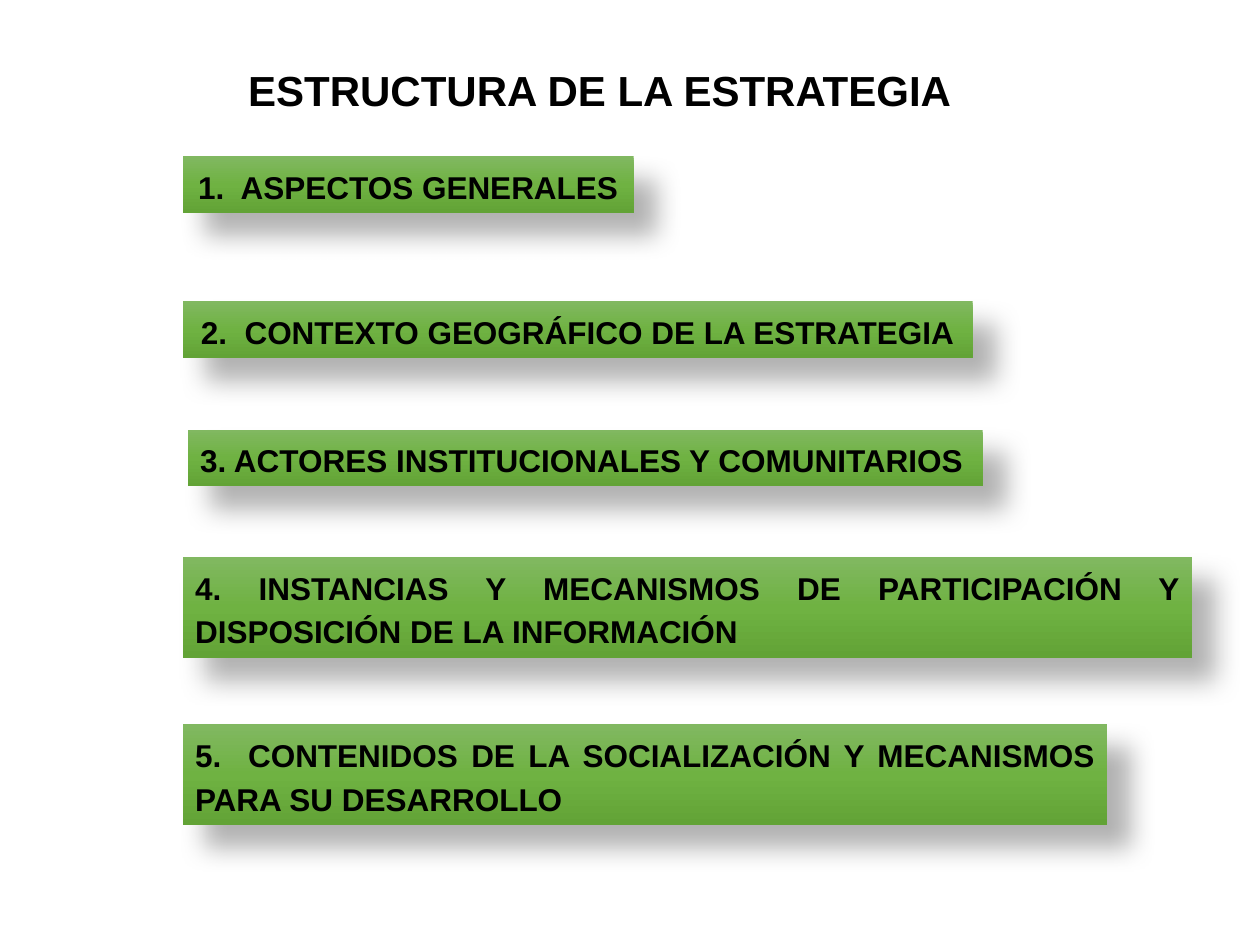
from pptx import Presentation
from pptx.dml.color import RGBColor
from pptx.enum.shapes import MSO_SHAPE
from pptx.enum.text import MSO_ANCHOR, MSO_AUTO_SIZE, PP_ALIGN
from pptx.oxml import parse_xml
from pptx.oxml.ns import nsdecls, qn
from pptx.util import Inches, Pt

RECTANGLE = MSO_SHAPE.RECTANGLE
TOP = MSO_ANCHOR.TOP
GROW = MSO_AUTO_SIZE.SHAPE_TO_FIT_TEXT
CENTER, JUSTIFY = PP_ALIGN.CENTER, PP_ALIGN.JUSTIFY

COLORS = {
    "light": "81B861",
    "middle": "6FB242",
    "dark": "62A336",
    "ink": "000000",
    "shadow": "000000",
}
GRADIENT = {0: "light", 50: "middle", 100: "dark"}
COLUMNS, ROWS = 100, 75
CELL = Inches(0.1)
BAR_LEFT = 14.5
ONE_LINE, TWO_LINES = 4.5, 8

SECTIONS = [
    ("1.  ASPECTOS GENERALES",
     (BAR_LEFT, 12.4, 35.8, ONE_LINE), CENTER, False),
    ("2.  CONTEXTO GEOGRÁFICO DE LA ESTRATEGIA",
     (BAR_LEFT, 23.9, 62.7, ONE_LINE), CENTER, False),
    ("3. ACTORES INSTITUCIONALES Y COMUNITARIOS",
     (14.9, 34.1, 63.1, ONE_LINE), JUSTIFY, True),
    ("4. INSTANCIAS Y MECANISMOS DE PARTICIPACIÓN Y DISPOSICIÓN DE LA INFORMACIÓN",
     (BAR_LEFT, 44.2, 80.1, TWO_LINES), JUSTIFY, True),
    ("5.  CONTENIDOS DE LA SOCIALIZACIÓN Y MECANISMOS PARA SU DESARROLLO",
     (BAR_LEFT, 57.5, 73.4, TWO_LINES), JUSTIFY, True),
]


def grid(area):
    """Turn columns and rows into slide lengths."""
    return [int(CELL * units) for units in area]


def set_values(target, values):
    """Set each named attribute of the target."""
    for name, value in values.items():
        setattr(target, name, value)


def write_text(box, text, size, align, wrap):
    """Write one bold paragraph into a box that fits its text."""
    frame = box.text_frame
    set_values(frame, {"word_wrap": wrap, "auto_size": GROW, "vertical_anchor": TOP})
    para = frame.paragraphs[0]
    set_values(para, {"alignment": align, "line_spacing": 1.15, "space_before": Pt(0)})
    span = para.add_run()
    span.text = text
    set_values(span.font, {"name": "Arial", "size": Pt(size), "bold": True})
    span.font.color.rgb = RGBColor.from_string(COLORS["ink"])


def fill_gradient(box):
    """Fill a box with the green gradient from top to bottom."""
    box.fill.gradient()
    box.fill.gradient_angle = 270
    stops = box.element.spPr.find(".//" + qn("a:gsLst"))
    for stop in list(stops):
        stops.remove(stop)
    for share, name in GRADIENT.items():
        stops.append(parse_xml(
            f'<a:gs {nsdecls("a")} pos="{share * 1000}">'
            f'<a:srgbClr val="{COLORS[name]}"/></a:gs>'))


def cast_shadow(box):
    """Give a box a soft shadow to the lower right."""
    box.shadow.inherit = False
    effects = box.element.spPr.find(qn("a:effectLst"))
    effects.append(parse_xml(
        f'<a:outerShdw {nsdecls("a")} blurRad="{Pt(15)}" dist="{Pt(18)}" '
        f'dir="{45 * 60000}" algn="tl" rotWithShape="0">'
        f'<a:srgbClr val="{COLORS["shadow"]}"><a:alpha val="30000"/></a:srgbClr>'
        '</a:outerShdw>'))


def add_section(page, text, area, align, wrap):
    """Add one green section bar."""
    box = page.shapes.add_shape(RECTANGLE, *grid(area))
    fill_gradient(box)
    box.line.fill.background()
    cast_shadow(box)
    write_text(box, text, 18, align, wrap)


def add_title(page, text, area):
    """Add the slide heading."""
    box = page.shapes.add_textbox(*grid(area))
    write_text(box, text, 24, CENTER, False)


def main():
    """Build the deck and save it."""
    deck = Presentation()
    set_values(deck, {"slide_width": CELL * COLUMNS, "slide_height": CELL * ROWS})
    page = deck.slides.add_slide(deck.slide_layouts[6])
    for section in SECTIONS:
        add_section(page, *section)
    add_title(page, "ESTRUCTURA DE LA ESTRATEGIA ", (18.1, 4, 59.8, 5.7))
    deck.save("out.pptx")


if __name__ == "__main__":
    main()
